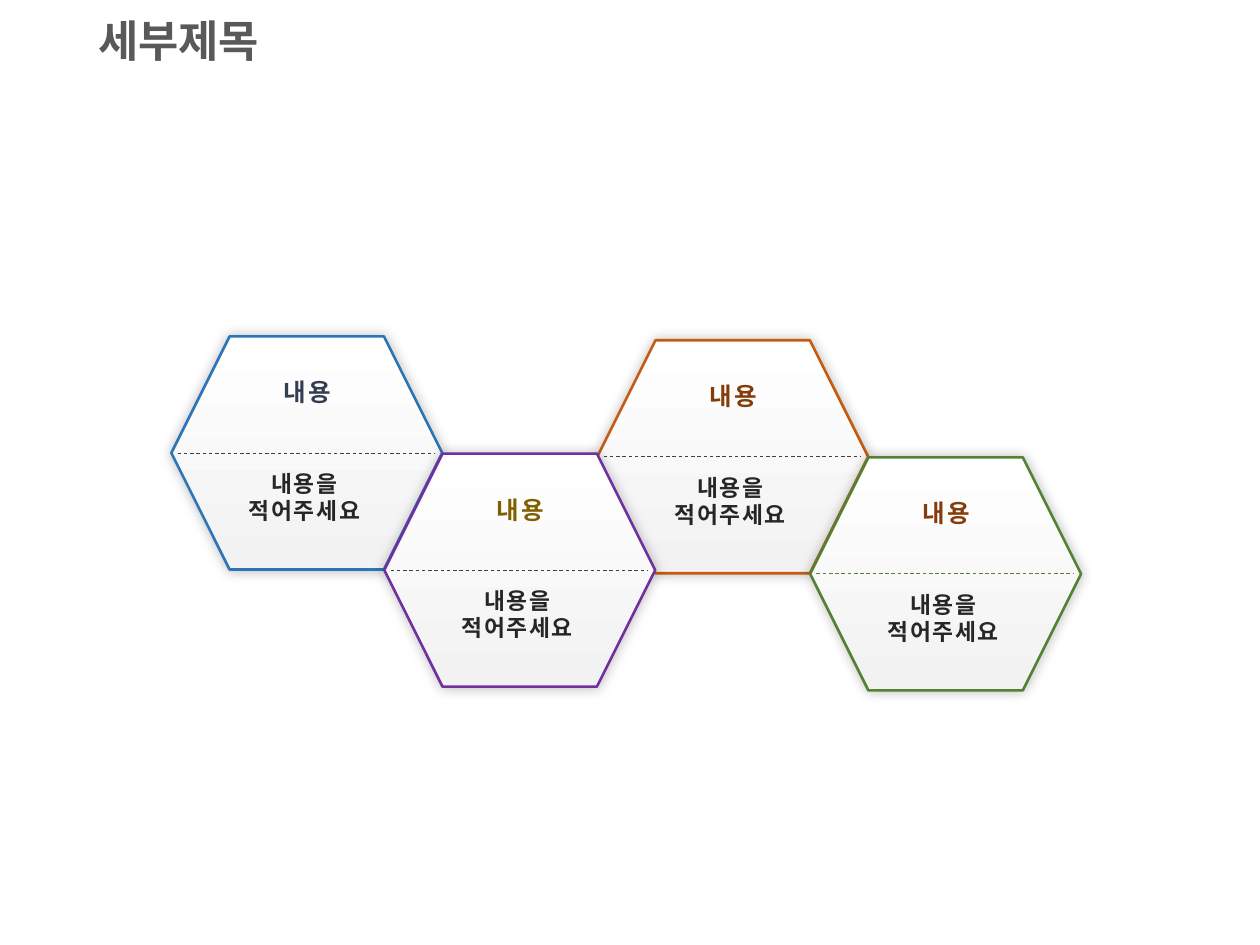
from dataclasses import dataclass

import pptx
import pptx.chart.data
import pptx.dml.color
import pptx.enum.dml
import pptx.enum.shapes
import pptx.enum.text
import pptx.oxml
import pptx.oxml.ns
import pptx.util

Inches = pptx.util.Inches
Pt = pptx.util.Pt
Align = pptx.enum.text.PP_ALIGN
AutoSize = pptx.enum.text.MSO_AUTO_SIZE


@dataclass(frozen=True)
class Theme:
    latin: str = "Calibri"
    korean: str = "Noto Sans CJK KR"
    title_size: int = 25
    heading_size: int = 14
    body_size: int = 13
    title: str = "595959"
    body: str = "262626"
    divider: str = "404040"
    gradient: tuple = ("FFFFFF", "F2F2F2")
    shadow: str = "000000"


@dataclass(frozen=True)
class Step:
    heading: str
    lines: tuple
    outline: str
    heading_color: str
    divider: str


def rgb(value):
    return pptx.dml.color.RGBColor.from_string(value)


def append_xml(parent, tag, attributes="", inner=""):
    namespace = pptx.oxml.ns.nsdecls("a")
    parent.append(pptx.oxml.parse_xml(
        f"<a:{tag} {namespace} {attributes}>{inner}</a:{tag}>"))


class HexagonSlide:
    """Draws a title and captioned hexagons on one slide in a shared theme."""

    width, height = 2.15, 1.85

    def __init__(self, presentation, theme):
        self.theme = theme
        self.slide = presentation.slides.add_slide(presentation.slide_layouts[5])

    def style(self, paragraph, latin, size, color, spacing=0):
        font = paragraph.font
        font.name, font.size, font.bold = latin, Pt(size), True
        font.color.rgb = rgb(color)
        append_xml(font._element, "ea", f'typeface="{self.theme.korean}"')
        if spacing:
            font._element.set("spc", str(spacing * 100))

    def title(self, wording):
        heading = self.slide.shapes.title
        heading.left, heading.top = Inches(0.68), Inches(0.06)
        heading.width, heading.height = Inches(8.62), Inches(0.57)
        frame = heading.text_frame
        frame.text = wording
        frame.auto_size = AutoSize.NONE
        frame.vertical_anchor = pptx.enum.text.MSO_ANCHOR.MIDDLE
        paragraph = frame.paragraphs[0]
        paragraph.alignment, paragraph.line_spacing = Align.LEFT, 0.9
        self.style(paragraph, self.theme.latin, self.theme.title_size, self.theme.title)

    def hexagon(self, left, top, outline, divider):
        group = self.slide.shapes.add_group_shape()
        cell = group.shapes.add_shape(
            pptx.enum.shapes.MSO_SHAPE.HEXAGON, Inches(left), Inches(top),
            Inches(self.width), Inches(self.height))
        cell.fill.gradient()
        cell.fill.gradient_angle = 270
        for stop, color in zip(cell.fill.gradient_stops, self.theme.gradient):
            stop.color.rgb = rgb(color)
        cell.line.color.rgb, cell.line.width = rgb(outline), Pt(1.5)
        cell.shadow.inherit = False
        effects = cell._element.spPr.find(pptx.oxml.ns.qn("a:effectLst"))
        append_xml(
            effects, "outerShdw", f'blurRad="{Pt(7)}" algn="ctr" rotWithShape="0"',
            f'<a:srgbClr val="{self.theme.shadow}"><a:alpha val="25000"/></a:srgbClr>')
        self.divider(group, left + 0.05, top + self.height / 2, divider)

    def divider(self, group, left, middle, color):
        rule = group.shapes.add_connector(
            pptx.enum.shapes.MSO_CONNECTOR.STRAIGHT, Inches(left), Inches(middle),
            Inches(left + 2.04), Inches(middle))
        rule.line.color.rgb, rule.line.width = rgb(color), Pt(0.5)
        rule.line.dash_style = pptx.enum.dml.MSO_LINE.DASH
        append_xml(rule._element.spPr, "effectLst")

    def caption(self, box, lines, size, color, line_spacing):
        frame = self.slide.shapes.add_textbox(*map(Inches, box)).text_frame
        frame.word_wrap = True
        frame.auto_size = AutoSize.SHAPE_TO_FIT_TEXT
        frame.text = "\n".join(lines)
        for paragraph in frame.paragraphs:
            paragraph.alignment = Align.CENTER
            paragraph.line_spacing = Pt(line_spacing)
            self.style(paragraph, self.theme.korean, size, color, spacing=1)

    def step(self, left, top, step):
        self.hexagon(left, top, step.outline, step.divider)
        self.caption((left + 0.22, top + 0.26, 1.72, 0.34), [step.heading],
                     self.theme.heading_size, step.heading_color, 18)
        self.caption((left + 0.28, top + 1.01, 1.55, 0.54), step.lines,
                     self.theme.body_size, self.theme.body, 15.6)


def main():
    presentation = pptx.Presentation()
    presentation.slide_width, presentation.slide_height = Inches(10), Inches(7.5)
    theme = Theme()
    page = HexagonSlide(presentation, theme)
    page.title("세부제목")
    lines = ("내용을", "적어주세요")
    steps = [
        Step("내용", lines, "2E75B6", "333F50", theme.divider),
        Step("내용", lines, "7030A0", "806000", theme.divider),
        Step("내용", lines, "C55A11", "843C0B", theme.divider),
        Step("내용", lines, "548235", "843C0B", "548235"),
    ]
    for position in (2, 0, 1, 3):
        left = 1.36 + 1.69 * position
        top = 2.67 + 0.93 * (position % 2) + 0.03 * (position // 2)
        page.step(left, top, steps[position])
    presentation.save("out.pptx")


if __name__ == "__main__":
    main()
